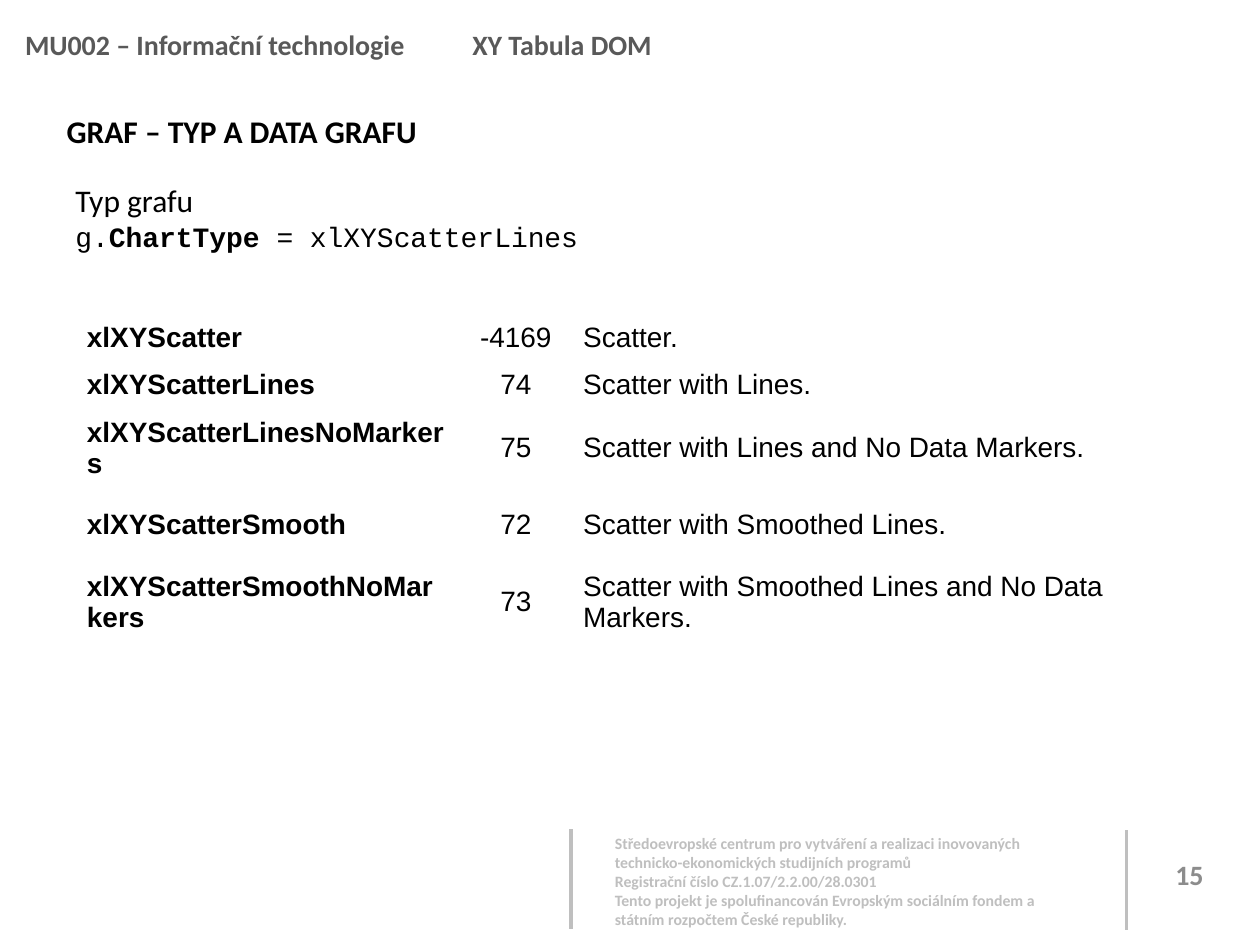
"""Build the slide on chart types and chart data."""
import pptx
import pptx.dml.color
import pptx.enum.shapes
import pptx.enum.text
import pptx.util
from lxml import etree

Pt = pptx.util.Pt
RGBColor = pptx.dml.color.RGBColor
Align = pptx.enum.text.PP_ALIGN
Anchor = pptx.enum.text.MSO_ANCHOR

BLACK = RGBColor(0x00, 0x00, 0x00)
HEADER_GRAY = RGBColor(0x59, 0x59, 0x59)
NUMBER_GRAY = RGBColor(0x8C, 0x8C, 0x8C)
FOOTER_GRAY = RGBColor(0xBF, 0xBF, 0xBF)

HEADER = {"name": "Calibri", "size": Pt(16), "bold": True, "color": HEADER_GRAY}
TITLE = {"name": "Calibri", "size": Pt(18), "bold": True, "color": BLACK}
BODY = {**TITLE, "bold": False}
CODE = {"name": "Courier New", "size": Pt(16), "bold": False, "color": BLACK}
CODE_BOLD = {**CODE, "bold": True}
FOOTER = {"name": "Calibri", "size": Pt(9), "bold": True, "color": FOOTER_GRAY}
NUMBER = {**HEADER, "color": NUMBER_GRAY}
CELL = {"name": "Arial", "size": Pt(16), "bold": False, "color": BLACK}
CELL_BOLD = {**CELL, "bold": True}

FOOTER_LINES = [
    "Středoevropské centrum pro vytváření a realizaci inovovaných technicko-ekonomických studijních programů",
    "Registrační číslo CZ.1.07/2.2.00/28.0301",
    "Tento projekt je spolufinancován Evropským sociálním fondem a státním rozpočtem České republiky.",
]
TEXTS = [
    {"at": (348.5, 473.8, 254.9, 60.5), "margin": 2.9,
     "paragraphs": [[(line, FOOTER)] for line in FOOTER_LINES]},
    {"at": (655.2, 485.3, 49, 28.8), "anchor": Anchor.MIDDLE, "align": Align.CENTER,
     "paragraphs": [[("15", NUMBER)]]},
    {"at": (36, 100.1, 648, 382.3), "paragraphs": [
        [("Typ grafu", BODY)],
        [("g.", CODE), ("ChartType ", CODE_BOLD), ("= xlXYScatterLines", CODE)]]},
    {"at": (31, 60.5, 663.1, 28.8),
     "paragraphs": [[("GRAF – TYP A DATA GRAFU", TITLE)]]},
    {"at": (7.2, 2.9, 687.6, 33.1), "spacing": 1.5,
     "paragraphs": [[("MU002 – Informační technologie \t XY Tabula DOM", HEADER)]]},
]
DIVIDERS = [(326.2, 473.8), (643.7, 474.5)]
DIVIDER_LENGTH = 56.9

CHART_TYPES = [
    ("xlXYScatter", "-4169", "Scatter."),
    ("xlXYScatterLines", "74", "Scatter with Lines."),
    ("xlXYScatterLinesNoMarkers", "75", "Scatter with Lines and No Data Markers."),
    ("xlXYScatterSmooth", "72", "Scatter with Smoothed Lines."),
    ("xlXYScatterSmoothNoMarkers", "73", "Scatter with Smoothed Lines and No Data Markers."),
]
COLUMNS = [(221, CELL_BOLD, Align.LEFT), (62.6, CELL, Align.CENTER), (339.8, CELL, Align.LEFT)]
ROW_HEIGHTS = [27, 27, 42.3, 42.3, 42.3]
TABLE_LEFT, TABLE_TOP = 42.5, 179.3


def add_span(para, text, style):
    span = para.add_run()
    span.text = text
    for key, value in style.items():
        if key == "color":
            span.font.color.rgb = value
        else:
            setattr(span.font, key, value)


def add_text(page, at, paragraphs, margin=None, anchor=Anchor.TOP, align=Align.LEFT, spacing=1.0):
    frame = page.shapes.add_textbox(*map(Pt, at)).text_frame
    frame.word_wrap = True
    frame.vertical_anchor = anchor
    if margin is not None:
        for side in ("left", "top", "right", "bottom"):
            setattr(frame, f"margin_{side}", Pt(margin))
    for index, spans in enumerate(paragraphs):
        para = frame.add_paragraph() if index else frame.paragraphs[0]
        para.alignment = align
        para.line_spacing = spacing
        for text, style in spans:
            add_span(para, text, style)


def add_divider(page, left, top):
    line = page.shapes.add_connector(
        pptx.enum.shapes.MSO_CONNECTOR.STRAIGHT,
        Pt(left), Pt(top), Pt(left), Pt(top + DIVIDER_LENGTH))
    line.line.color.rgb = FOOTER_GRAY
    line.line.width = Pt(2)
    etree.SubElement(line._element.spPr, pptx.oxml.ns.qn("a:effectLst"))


def add_chart_types(page):
    width = sum(column[0] for column in COLUMNS)
    table = page.shapes.add_table(
        len(CHART_TYPES), len(COLUMNS), Pt(TABLE_LEFT), Pt(TABLE_TOP),
        Pt(width), Pt(sum(ROW_HEIGHTS))).table
    table.first_row = table.horz_banding = False
    for row, height in zip(table.rows, ROW_HEIGHTS):
        row.height = Pt(height)
    for index, (width, style, align) in enumerate(COLUMNS):
        table.columns[index].width = Pt(width)
        for row, values in enumerate(CHART_TYPES):
            cell = table.cell(row, index)
            cell.fill.background()
            cell.vertical_anchor = Anchor.MIDDLE
            para = cell.text_frame.paragraphs[0]
            para.alignment = align
            add_span(para, values[index], style)


def main():
    deck = pptx.Presentation()
    deck.slide_width, deck.slide_height = Pt(720), Pt(540)
    page = deck.slides.add_slide(deck.slide_layouts[6])
    for text in TEXTS:
        add_text(page, **text)
    for left, top in DIVIDERS:
        add_divider(page, left, top)
    add_chart_types(page)
    deck.save("out.pptx")


if __name__ == "__main__":
    main()
